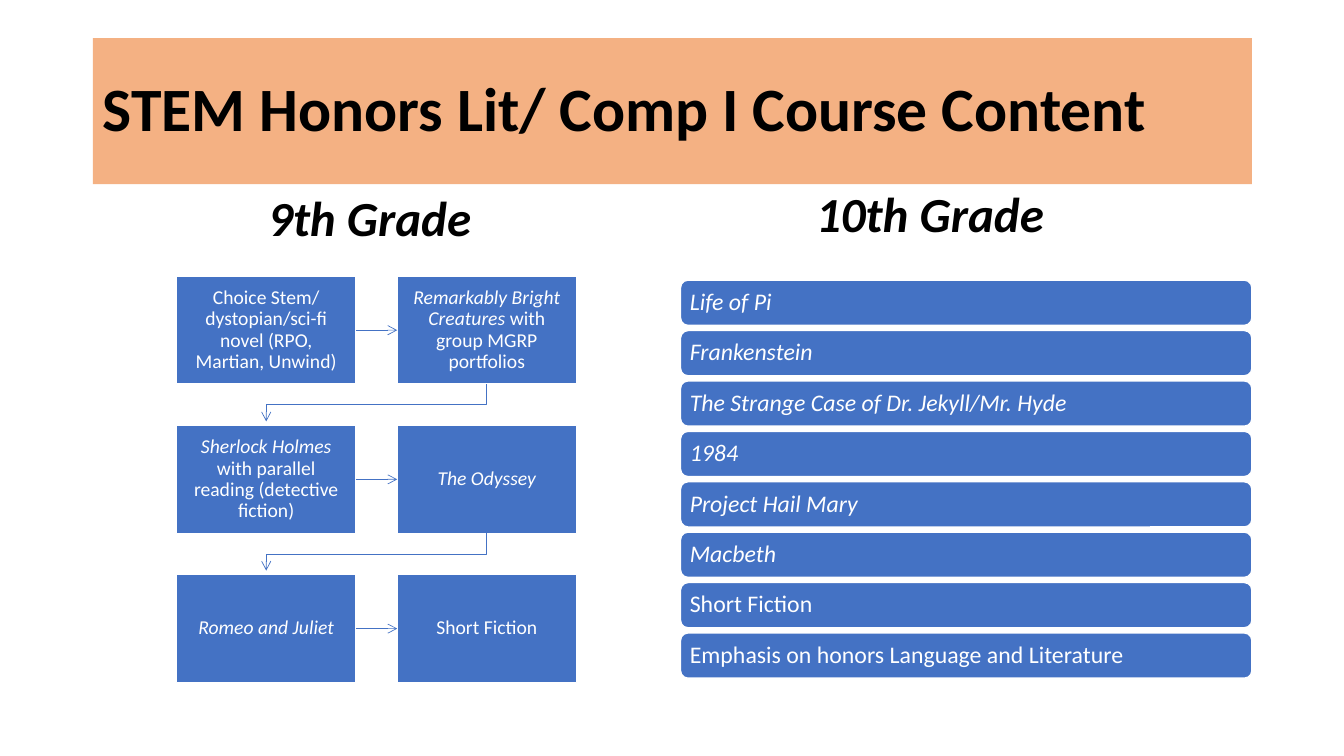
from dataclasses import dataclass
from pptx import Presentation
from pptx.dml.color import RGBColor
from pptx.enum.shapes import MSO_CONNECTOR, MSO_SHAPE
from pptx.enum.text import MSO_ANCHOR, MSO_AUTO_SIZE, PP_ALIGN
from pptx.oxml.ns import qn
from pptx.util import Cm, Pt
from lxml import etree

RECTANGLE, ROUNDED = MSO_SHAPE.RECTANGLE, MSO_SHAPE.ROUNDED_RECTANGLE
LEFT, CENTER = PP_ALIGN.LEFT, PP_ALIGN.CENTER
MIDDLE, BOTTOM = MSO_ANCHOR.MIDDLE, MSO_ANCHOR.BOTTOM
STRAIGHT = MSO_CONNECTOR.STRAIGHT
NO_AUTOFIT = MSO_AUTO_SIZE.NONE


@dataclass(frozen=True)
class Theme:
    font: str = "Calibri"
    banner: RGBColor = RGBColor(0xF4, 0xB1, 0x83)
    blue: RGBColor = RGBColor(0x44, 0x72, 0xC4)
    white: RGBColor = RGBColor(0xFF, 0xFF, 0xFF)
    black: RGBColor = RGBColor(0, 0, 0)
    title_size: int = 44
    heading_size: int = 35
    bar_size: int = 17
    step_size: int = 14


theme = Theme()


def write(shape, runs, size, color, align=CENTER, anchor=MIDDLE, bold=False, margins=(0.25, 0.13, 0.25, 0.13)):
    """Fill a shape with one paragraph; runs are (text, italic) pairs."""
    frame = shape.text_frame
    frame.word_wrap = True
    frame.auto_size = NO_AUTOFIT
    frame.vertical_anchor = anchor
    frame.margin_left, frame.margin_top, frame.margin_right, frame.margin_bottom = map(Cm, margins)
    paragraph = frame.paragraphs[0]
    paragraph.alignment = align
    paragraph.line_spacing = 0.9
    paragraph.space_before = Pt(0)
    for text, italic in runs:
        run = paragraph.add_run()
        run.text = text
        run.font.name = theme.font
        run.font.size = Pt(size)
        run.font.bold = bold
        run.font.italic = italic
        run.font.color.rgb = color


def add_block(kind, left, top, width, height):
    block = slide.shapes.add_shape(kind, Cm(left), Cm(top), Cm(width), Cm(height))
    block.shadow.inherit = False
    block.fill.solid()
    block.fill.fore_color.rgb = theme.blue
    block.line.color.rgb = theme.white
    block.line.width = Pt(1)
    return block


presentation = Presentation()
presentation.slide_width, presentation.slide_height = Cm(33.87), Cm(19.05)
slide = presentation.slides.add_slide(presentation.slide_layouts.get_by_name("Comparison"))
placeholders = {item.placeholder_format.idx: item for item in slide.placeholders}
for unused in (2, 4, 10, 11, 12):
    if unused in placeholders:
        element = placeholders[unused].element
        element.getparent().remove(element)

# Title banner
title = slide.shapes.title
title.left, title.top, title.width, title.height = Cm(2.34), Cm(0.96), Cm(29.21), Cm(3.68)
title.fill.solid()
title.fill.fore_color.rgb = theme.banner
write(title, [("STEM Honors Lit/ Comp I Course Content", False)], theme.title_size, theme.black,
      align=LEFT, bold=True)

# Grade headings, set off-centre by a wide right margin
headings = [
    (1, "9th Grade", (6.4, 4.65, 8.31, 1.7), 2.72),
    (3, "10th Grade", (19.81, 3.96, 9.04, 2.29), 2.03),
]
for index, text, bounds, right_margin in headings:
    heading = placeholders[index]
    heading.left, heading.top, heading.width, heading.height = map(Cm, bounds)
    write(heading, [(text, True)], theme.heading_size, theme.black, anchor=BOTTOM, bold=True,
          margins=(0.25, 0.13, right_margin, 0.13))

# 9th grade sequence: two columns, three rows
steps = [
    [("Choice Stem/ dystopian/sci-fi novel (RPO, Martian, Unwind)", False)],
    [("Remarkably Bright Creatures ", True), ("with group MGRP portfolios", False)],
    [("Sherlock Holmes ", True), ("with parallel reading (detective fiction)", False)],
    [("The Odyssey", True)],
    [("Romeo and Juliet", True)],
    [("Short Fiction", False)],
]
step_blocks = []
for number, runs in enumerate(steps):
    row, column = divmod(number, 2)
    block = add_block(RECTANGLE, 4.45 + 5.56 * column, 6.96 + 3.76 * row, 4.52, 2.72)
    write(block, runs, theme.step_size, theme.white, margins=(0.23,) * 4)
    step_blocks.append(block)

# Arrows: straight across a row, bent down to the next row
arrows = []
for number, (source, target) in enumerate(zip(step_blocks, step_blocks[1:])):
    if number % 2 == 0:
        arrow = slide.shapes.add_connector(STRAIGHT, 0, 0, 0, 0)
        arrow.begin_connect(source, 3)
        arrow.end_connect(target, 1)
    else:
        start_x = source.left + source.width // 2
        end_x = target.left + target.width // 2
        start_y = source.top + source.height
        bend_y = (start_y + target.top) // 2
        builder = slide.shapes.build_freeform(start_x, start_y)
        builder.add_line_segments([(start_x, bend_y), (end_x, bend_y), (end_x, target.top - Cm(0.1))], close=False)
        arrow = builder.convert_to_shape()
        arrow.fill.background()
    arrows.append(arrow)

for arrow in arrows:
    arrow.line.color.rgb = theme.blue
    arrow.line.width = Pt(0.5)
    properties = arrow.element.spPr
    etree.SubElement(properties.find(qn("a:ln")), qn("a:tailEnd"), type="arrow")
    etree.SubElement(properties, qn("a:effectLst"))

# 10th grade reading list
readings = [
    ("Life of Pi", True),
    ("Frankenstein", True),
    ("The Strange Case of Dr. Jekyll/Mr. Hyde", True),
    ("1984", True),
    ("Project Hail Mary", True),
    ("Macbeth", True),
    ("Short Fiction", False),
    ("Emphasis on honors Language and Literature", False),
]
for row, reading in enumerate(readings):
    bar = add_block(ROUNDED, 17.15, 7.06 + 1.27 * row, 14.4, 1.14)
    write(bar, [reading], theme.bar_size, theme.white, align=LEFT, margins=(0.18, 0.1, 0.18, 0.1))

presentation.save("out.pptx")
